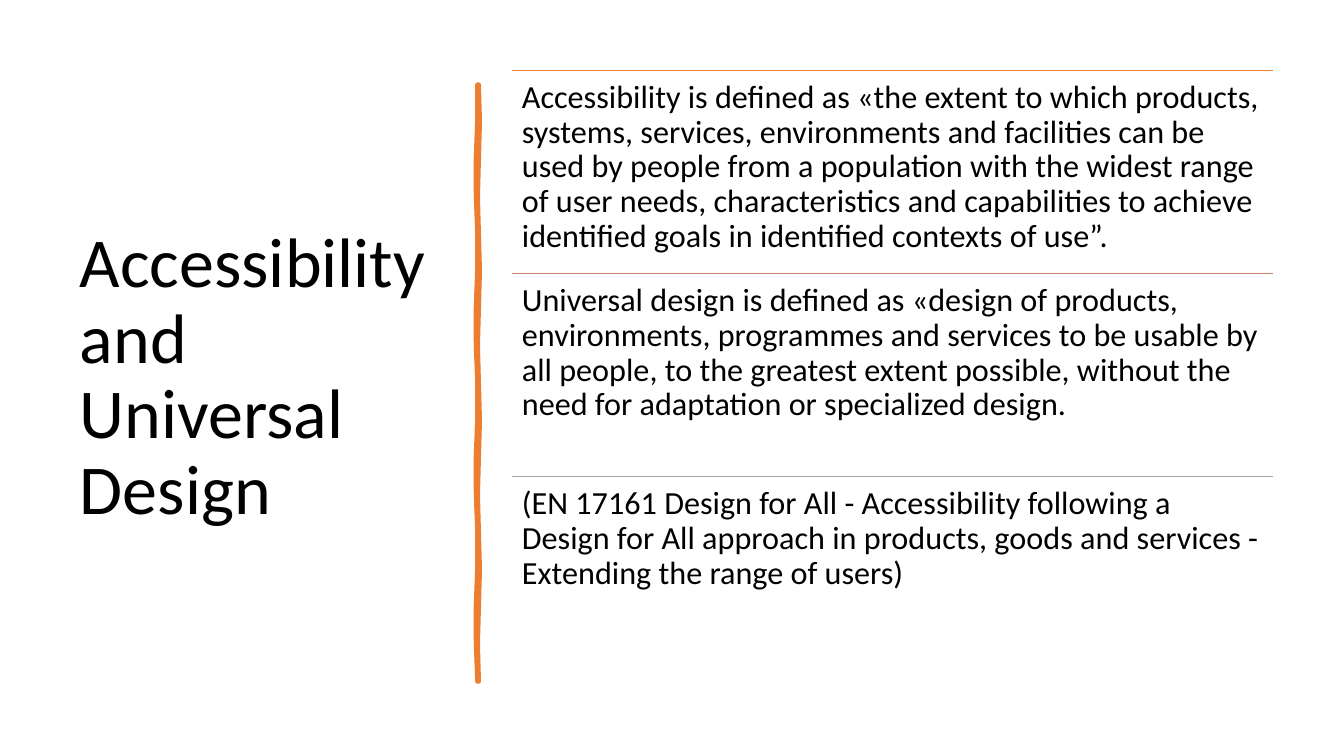
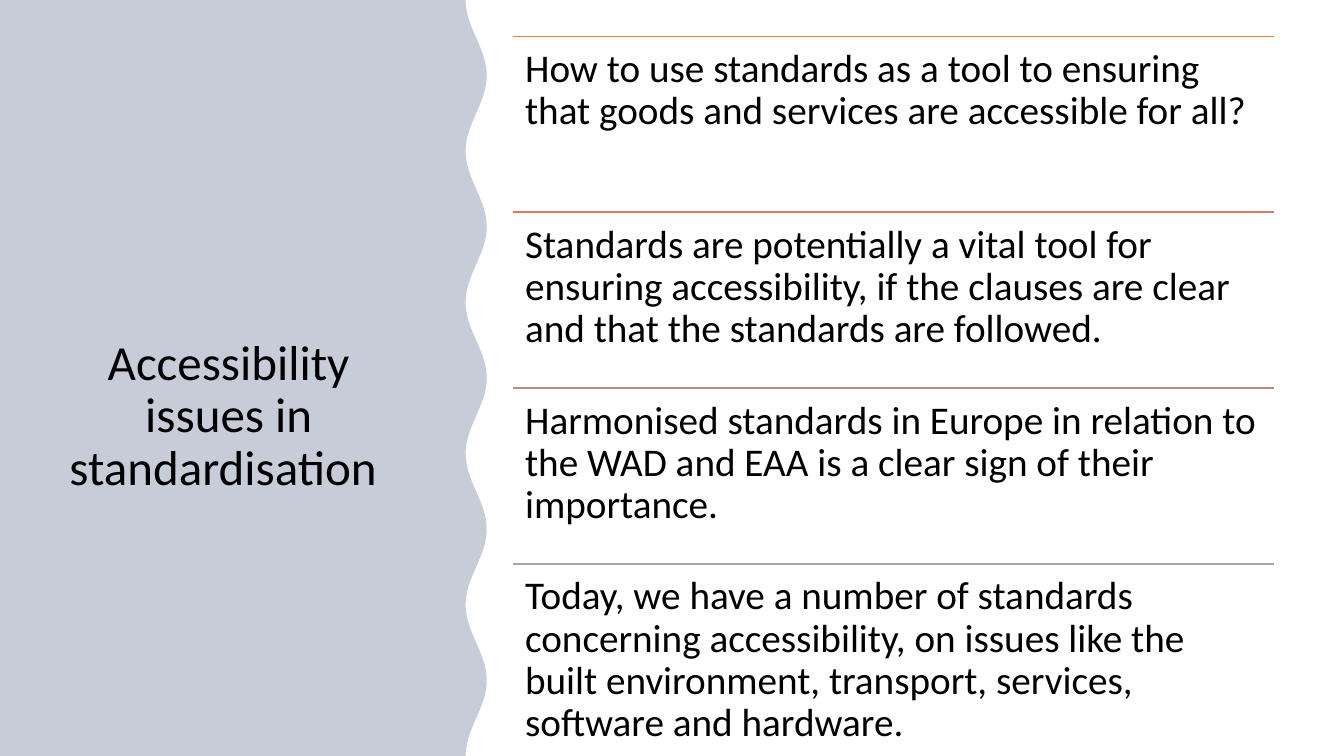
from dataclasses import dataclass
from math import cos, pi, sin

from lxml.etree import SubElement
from pptx import Presentation
from pptx.dml.color import RGBColor
from pptx.enum.shapes import MSO_CONNECTOR
from pptx.enum.text import MSO_ANCHOR, PP_ALIGN
from pptx.oxml.ns import qn
from pptx.util import Emu, Pt


@dataclass(frozen=True)
class Theme:
    font: str = "Calibri"
    text: str = "000000"
    accent: str = "ED7D31"
    panel: str = "203864"
    panel_alpha: int = 25
    line_spacing: float = 0.9
    rule_width: float = 1
    stroke_width: float = 3.25
    title_large: int = 50
    title_small: int = 35
    body_large: int = 28
    body_small: int = 23


THEME = Theme()
WIDTH, HEIGHT = 2667, 1500


def px(n):
    """200 px to the inch."""
    return Emu(round(n * 4572))


def rgb(value):
    return RGBColor.from_string(value)


def write(tf, text, *, size, align=PP_ALIGN.LEFT, anchor=MSO_ANCHOR.TOP, inset=(20, 10)):
    tf.word_wrap = True
    tf.vertical_anchor = anchor
    tf.margin_left = tf.margin_right = px(inset[0])
    tf.margin_top = tf.margin_bottom = px(inset[1])
    p = tf.paragraphs[0]
    p.alignment = align
    p.line_spacing = THEME.line_spacing
    r = p.add_run()
    r.text = text
    r.font.name = THEME.font
    r.font.size = Pt(size)
    r.font.color.rgb = rgb(THEME.text)


class Deck:
    def __init__(self):
        self.prs = Presentation()
        self.prs.slide_width, self.prs.slide_height = px(WIDTH), px(HEIGHT)
        self.s = None

    def new_slide(self):
        self.s = self.prs.slides.add_slide(self.prs.slide_layouts[6])

    def text(self, x, y, w, h, text, **fmt):
        sp = self.s.shapes.add_textbox(px(x), px(y), px(w), px(h))
        write(sp.text_frame, text, **fmt)

    def rule(self, x, y, w, color):
        line = self.s.shapes.add_connector(
            MSO_CONNECTOR.STRAIGHT, px(x), px(y), px(x + w), px(y))
        line.line.color.rgb = rgb(color)
        line.line.width = Pt(THEME.rule_width)
        SubElement(line._element.spPr, qn("a:effectLst"))

    def outline(self, points, color):
        vertices = [(px(x), px(y)) for x, y in points]
        builder = self.s.shapes.build_freeform(*vertices[0], scale=1.0)
        builder.add_line_segments(vertices[1:], close=True)
        sp = builder.convert_to_shape()
        sp.shadow.inherit = False
        sp.fill.solid()
        sp.fill.fore_color.rgb = rgb(color)
        sp.line.fill.background()
        return sp

    def brush_stroke(self, x, top, bottom):
        """Narrow vertical bar with a hand-drawn wobble."""
        def sway(y):
            return 2 * sin(2 * pi * (y - top) / 296)

        ys = range(top, bottom + 1, 74)
        right = [(x + 2 + sway(y), y) for y in ys]
        left = [(x - 2 + sway(y + 40), y) for y in reversed(ys)]
        sp = self.outline(right + left, THEME.accent)
        sp.line.color.rgb = rgb(THEME.accent)
        sp.line.width = Pt(THEME.stroke_width)
        SubElement(sp.line._get_or_add_ln(), qn("a:round"))

    def wave_panel(self, middle, swing, period):
        """Translucent left panel whose right edge is a wave."""
        edge = [(middle - swing * cos(2 * pi * y / period), y)
                for y in range(0, HEIGHT + 1, 12)]
        sp = self.outline([(0, 0), *edge, (0, HEIGHT)], THEME.panel)
        color = sp._element.spPr.find(qn("a:solidFill"))[0]
        SubElement(color, qn("a:alpha"), val=str(THEME.panel_alpha * 1000))

    def ruled_list(self, x, y, w, pitch, rows, *, size, inset):
        for i, (color, text) in enumerate(rows):
            top = y + i * pitch
            self.rule(x, top, w, color)
            self.text(x, top, w, pitch, text, size=size, inset=(inset, inset))


DEFINITIONS = [
    ("ED7D31", "Accessibility is defined as «the extent to which products, systems, "
     "services, environments and facilities can be used by people from a population "
     "with the widest range of user needs, characteristics and capabilities to achieve "
     "identified goals in identified contexts of use”."),
    ("C48170", "Universal design is defined as «design of products, environments, "
     "programmes and services to be usable by all people, to the greatest extent "
     "possible, without the need for adaptation or specialized design."),
    ("A5A5A5", "(EN 17161 Design for All - Accessibility following a Design for All "
     "approach in products, goods and services - Extending the range of users)"),
]
ISSUES = [
    ("ED7D31", "How to use standards as a tool to ensuring that goods and services "
     "are accessible for all?"),
    ("D17B5C", "Standards are potentially a vital tool for ensuring accessibility, "
     "if the clauses are clear and that the standards are followed."),
    ("B98A82", "Harmonised standards in Europe in relation to the WAD and EAA is a "
     "clear sign of their importance."),
    ("A5A5A5", "Today, we have a number of standards concerning accessibility, on "
     "issues like the built environment, transport, services, software and hardware."),
]


def main():
    deck = Deck()

    # Definitions
    deck.new_slide()
    deck.text(139, 140, 748, 1222, "Accessibility and Universal Design",
              size=THEME.title_large, anchor=MSO_ANCHOR.MIDDLE)
    deck.brush_stroke(948, 168, 1352)
    deck.ruled_list(1016, 140, 1510, 403, DEFINITIONS, size=THEME.body_small, inset=20)

    # Issues in standardisation
    deck.new_slide()
    deck.wave_panel(middle=945, swing=21, period=300)
    deck.text(100, 159, 708, 836, "Accessibility issues in standardisation ",
              size=THEME.title_small, align=PP_ALIGN.CENTER, anchor=MSO_ANCHOR.BOTTOM)
    deck.ruled_list(1018, 72, 1510, 349, ISSUES, size=THEME.body_large, inset=24)

    deck.prs.save("out.pptx")


if __name__ == "__main__":
    main()
